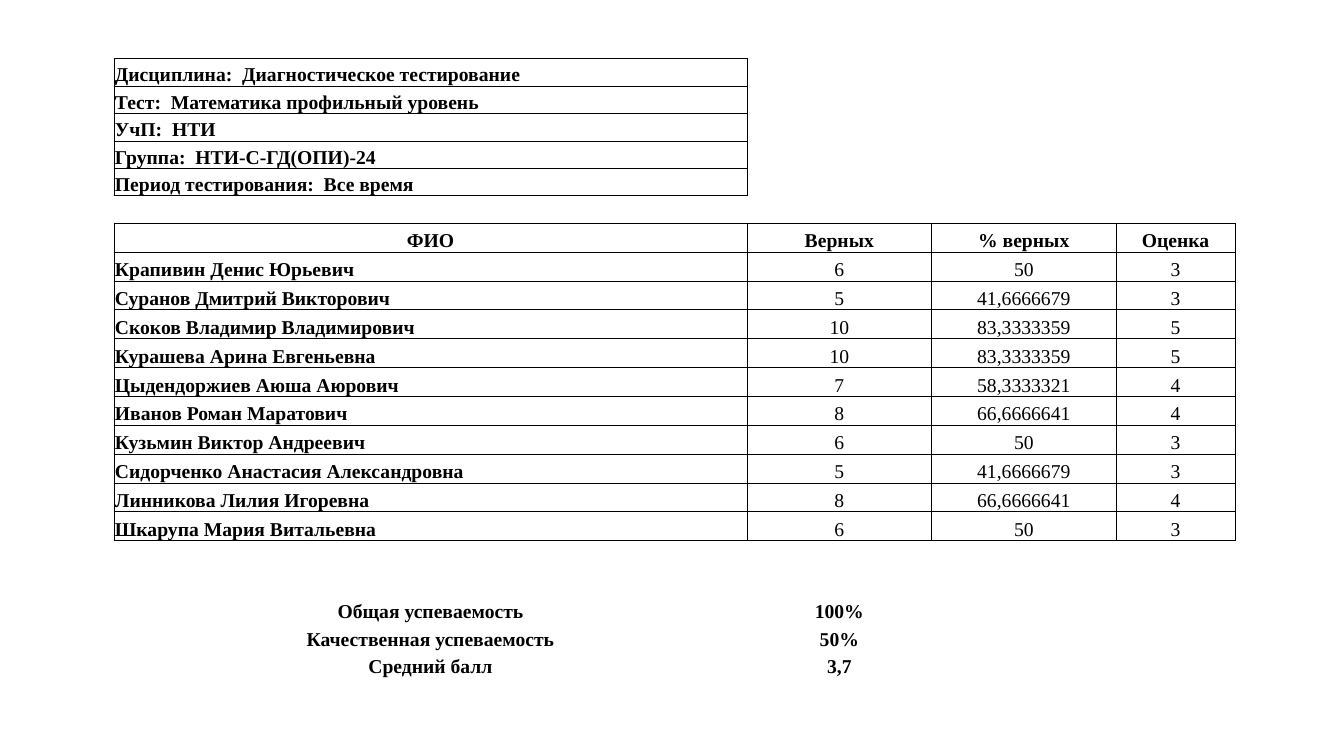
from lxml import etree
from pptx import Presentation
from pptx.dml.color import RGBColor
from pptx.enum.text import MSO_ANCHOR, PP_ALIGN
from pptx.oxml.ns import qn
from pptx.util import Inches, Pt

BOTTOM = MSO_ANCHOR.BOTTOM
LEFT, CENTER = PP_ALIGN.LEFT, PP_ALIGN.CENTER

TEST_INFO = [
    ("Дисциплина:  Диагностическое тестирование",),
    ("Тест:  Математика профильный уровень",),
    ("УчП:  НТИ",),
    ("Группа:  НТИ-С-ГД(ОПИ)-24",),
    ("Период тестирования:  Все время",),
]
HEADER = [("ФИО", "Верных", "% верных", "Оценка")]
STUDENTS = [
    ("Крапивин Денис Юрьевич", "6", "50", "3"),
    ("Суранов Дмитрий Викторович", "5", "41,6666679", "3"),
    ("Скоков Владимир Владимирович", "10", "83,3333359", "5"),
    ("Курашева Арина Евгеньевна", "10", "83,3333359", "5"),
    ("Цыдендоржиев Аюша Аюрович", "7", "58,3333321", "4"),
    ("Иванов Роман Маратович", "8", "66,6666641", "4"),
    ("Кузьмин Виктор Андреевич", "6", "50", "3"),
    ("Сидорченко Анастасия Александровна", "5", "41,6666679", "3"),
    ("Линникова Лилия Игоревна", "8", "66,6666641", "4"),
    ("Шкарупа Мария Витальевна", "6", "50", "3"),
]
SUMMARY = [
    ("Общая успеваемость", "100%"),
    ("Качественная успеваемость", "50%"),
    ("Средний балл", "3,7"),
]

PLAIN_HEIGHT = 3 / 11
SCORE_HEIGHT = 3.15 / 11
SECTIONS = [
    {"rows": TEST_INFO, "height": PLAIN_HEIGHT, "boxed": 1, "bold": 4, "left": 1},
    {"rows": [()], "height": PLAIN_HEIGHT, "boxed": 0, "bold": 0, "left": 0},
    {"rows": HEADER, "height": SCORE_HEIGHT, "boxed": 4, "bold": 4, "left": 0},
    {"rows": STUDENTS, "height": SCORE_HEIGHT, "boxed": 4, "bold": 1, "left": 1},
    {"rows": [(), ()], "height": PLAIN_HEIGHT, "boxed": 0, "bold": 0, "left": 0},
    {"rows": SUMMARY, "height": PLAIN_HEIGHT, "boxed": 0, "bold": 4, "left": 0},
]
LINES = [(section, texts) for section in SECTIONS for texts in section["rows"]]
COLUMN_WIDTHS = [6.28, 1.83, 1.83, 1.18]
TABLE_LEFT, TABLE_TOP = 1.13, 0.58
FONT_NAME, FONT_SIZE = "Times New Roman", 14
BLACK = "000000"
BORDER_WIDTH = 0.5
NO_STYLE = "{2D5ABB26-0587-4C30-8999-92F81FD0307C}"
SIDES = {"a:lnL": (0, -1), "a:lnR": (0, 1), "a:lnT": (-1, 0), "a:lnB": (1, 0)}
CELL_FORMAT = {
    "margin_left": Inches(0.01),
    "margin_right": Inches(0.01),
    "margin_top": Inches(0.01),
    "margin_bottom": 0,
    "vertical_anchor": BOTTOM,
}


def color(value):
    return RGBColor.from_string(value)


def apply_format(target, values):
    for name, value in values.items():
        setattr(target, name, value)


def is_boxed(row, column):
    return 0 <= row < len(LINES) and 0 <= column < LINES[row][0]["boxed"]


def draw_borders(cell, row, column):
    properties = cell._tc.get_or_add_tcPr()
    for tag, (row_step, column_step) in SIDES.items():
        line = etree.SubElement(properties, qn(tag), w=str(Pt(BORDER_WIDTH)))
        if is_boxed(row, column) or is_boxed(row + row_step, column + column_step):
            fill = etree.SubElement(line, qn("a:solidFill"))
            etree.SubElement(fill, qn("a:srgbClr"), val=BLACK)
        else:
            etree.SubElement(line, qn("a:noFill"))


def write_text(cell, text, bold, alignment):
    paragraph = cell.text_frame.paragraphs[0]
    paragraph.alignment = alignment
    if text:
        run = paragraph.add_run()
        run.text = text
        apply_format(run.font, {"name": FONT_NAME, "size": Pt(FONT_SIZE), "bold": bold})
        run.font.color.rgb = color(BLACK)
    else:
        etree.SubElement(paragraph._p, qn("a:endParaRPr"), sz=str(FONT_SIZE * 100))


def add_results_table(slide):
    total_height = sum(section["height"] for section, texts in LINES)
    frame = slide.shapes.add_table(
        len(LINES), len(COLUMN_WIDTHS), Inches(TABLE_LEFT), Inches(TABLE_TOP),
        Inches(sum(COLUMN_WIDTHS)), Inches(total_height))
    table = frame.table
    apply_format(table, {"first_row": False, "horz_banding": False})
    table._tbl.tblPr.find(qn("a:tableStyleId")).text = NO_STYLE
    for column, width in zip(table.columns, COLUMN_WIDTHS):
        column.width = Inches(width)
    for row, (section, texts) in enumerate(LINES):
        table.rows[row].height = Inches(section["height"])
        for column in range(len(COLUMN_WIDTHS)):
            cell = table.cell(row, column)
            text = texts[column] if column < len(texts) else ""
            alignment = LEFT if column < section["left"] else CENTER
            apply_format(cell, CELL_FORMAT)
            draw_borders(cell, row, column)
            cell.fill.background()
            write_text(cell, text, column < section["bold"], alignment)


def main():
    presentation = Presentation()
    presentation.slide_width = Inches(13.33)
    presentation.slide_height = Inches(7.5)
    slide = presentation.slides.add_slide(presentation.slide_layouts[6])
    add_results_table(slide)
    presentation.save("out.pptx")


if __name__ == "__main__":
    main()
